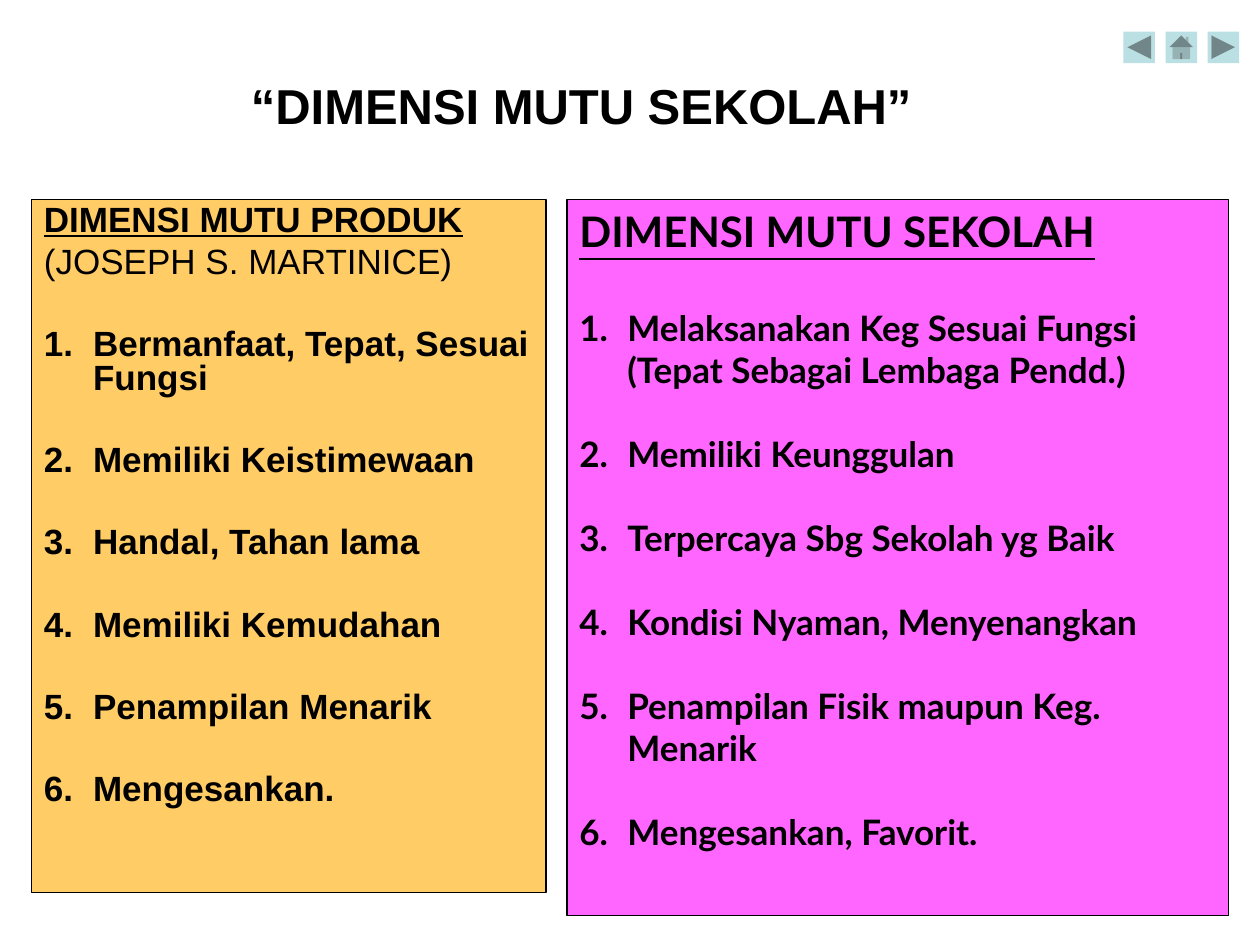
from dataclasses import dataclass

from lxml import etree
from pptx import Presentation
from pptx.dml.color import RGBColor
from pptx.enum.shapes import MSO_SHAPE
from pptx.enum.text import MSO_ANCHOR, MSO_AUTO_SIZE, PP_ALIGN
from pptx.oxml.ns import qn
from pptx.util import Inches, Pt

RECT = MSO_SHAPE.RECTANGLE
BACK = MSO_SHAPE.ACTION_BUTTON_BACK_OR_PREVIOUS
HOME = MSO_SHAPE.ACTION_BUTTON_HOME
NEXT = MSO_SHAPE.ACTION_BUTTON_FORWARD_OR_NEXT
LEFT, CENTER = PP_ALIGN.LEFT, PP_ALIGN.CENTER
TOP, MIDDLE = MSO_ANCHOR.TOP, MSO_ANCHOR.MIDDLE
NO_FIT = MSO_AUTO_SIZE.NONE

WIDTH, HEIGHT = Inches(10), Inches(7.5)
COLUMNS, ROWS = 120, 90
TITLE_ONLY = 5


@dataclass(frozen=True)
class Theme:
    text: str = "000000"
    product: str = "FFCC66"
    school: str = "FF66FF"
    button: str = "BBE0E3"
    title_size: int = 28
    heading_size: int = 24
    body_size: int = 20
    title_font: str = "Arial"
    school_font: str = "Lato"


THEME = Theme()

PRODUCT_ITEMS = [
    "Bermanfaat, Tepat, Sesuai Fungsi",
    "Memiliki Keistimewaan",
    "Handal, Tahan lama",
    "Memiliki Kemudahan",
    "Penampilan Menarik",
    "Mengesankan.",
]
SCHOOL_ITEMS = [
    "Melaksanakan Keg Sesuai Fungsi (Tepat Sebagai Lembaga Pendd.)",
    "Memiliki Keunggulan",
    "Terpercaya Sbg Sekolah yg Baik",
    "Kondisi Nyaman, Menyenangkan",
    "Penampilan Fisik maupun Keg. Menarik",
    "Mengesankan, Favorit.",
]


def grid(col, row, cols, rows):
    return (int(WIDTH * col / COLUMNS), int(HEIGHT * row / ROWS),
            int(WIDTH * cols / COLUMNS), int(HEIGHT * rows / ROWS))


def number(p, indent):
    pPr = p._p.get_or_add_pPr()
    pPr.set("marL", str(Inches(indent)))
    pPr.set("indent", str(-Inches(indent)))
    etree.SubElement(pPr, qn("a:buFont"), typeface="+mj-lt")
    etree.SubElement(pPr, qn("a:buAutoNum"), type="arabicPeriod")


def write(tf, text, font=THEME.title_font, size=THEME.body_size, bold=True,
          underline=False, align=LEFT, spacing=1.0, before=0, indent=None):
    p = tf.paragraphs[0] if not tf.text else tf.add_paragraph()
    p.alignment = align
    p.line_spacing = spacing
    p.space_before = Pt(before)
    if indent is not None:
        number(p, indent)
    r = p.add_run()
    r.text = text
    r.font.name = font
    r.font.size = Pt(size)
    r.font.bold = bold
    r.font.underline = underline
    r.font.color.rgb = RGBColor.from_string(THEME.text)


def add_box(slide, kind, cell, fill, outlined=False):
    sp = slide.shapes.add_shape(kind, *grid(*cell))
    sp.shadow.inherit = False
    sp.fill.solid()
    sp.fill.fore_color.rgb = RGBColor.from_string(fill)
    if outlined:
        sp.line.color.rgb = RGBColor.from_string(THEME.text)
        sp.line.width = Pt(0.75)
    else:
        sp.line.fill.background()
    return sp


def add_panel(slide, cell, fill):
    tf = add_box(slide, RECT, cell, fill, outlined=True).text_frame
    tf.word_wrap = True
    tf.vertical_anchor = TOP
    return tf


def add_title(slide, text):
    sp = slide.shapes.title
    sp.left, sp.top, sp.width, sp.height = grid(21, 6, 70, 8)
    tf = sp.text_frame
    tf.auto_size = NO_FIT
    tf.vertical_anchor = MIDDLE
    write(tf, text, size=THEME.title_size, align=CENTER)


def add_product_panel(slide):
    tf = add_panel(slide, (3, 19, 49, 66), THEME.product)
    tight = {"spacing": 0.8}
    write(tf, "DIMENSI MUTU PRODUK", underline=True, before=4.6, **tight)
    write(tf, "(JOSEPH S. MARTINICE)", bold=False, before=4.6, **tight)
    for item in PRODUCT_ITEMS:
        write(tf, item, before=27.8, indent=0.39, **tight)


def add_school_panel(slide):
    tf = add_panel(slide, (54, 19, 63, 68.2), THEME.school)
    font = THEME.school_font
    write(tf, "DIMENSI MUTU SEKOLAH", font=font, size=THEME.heading_size,
          underline=True)
    for i, item in enumerate(SCHOOL_ITEMS):
        gap = THEME.body_size if i else THEME.heading_size
        write(tf, item, font=font, before=1.2 * gap, indent=0.38)


def main():
    prs = Presentation()
    prs.slide_width, prs.slide_height = WIDTH, HEIGHT
    slide = prs.slides.add_slide(prs.slide_layouts[TITLE_ONLY])
    add_title(slide, "“DIMENSI MUTU SEKOLAH” ")
    add_product_panel(slide)
    for i, kind in enumerate((BACK, HOME, NEXT)):
        add_box(slide, kind, (107 + 4 * i, 3, 3, 3), THEME.button)
    add_school_panel(slide)
    prs.save("out.pptx")


if __name__ == "__main__":
    main()
